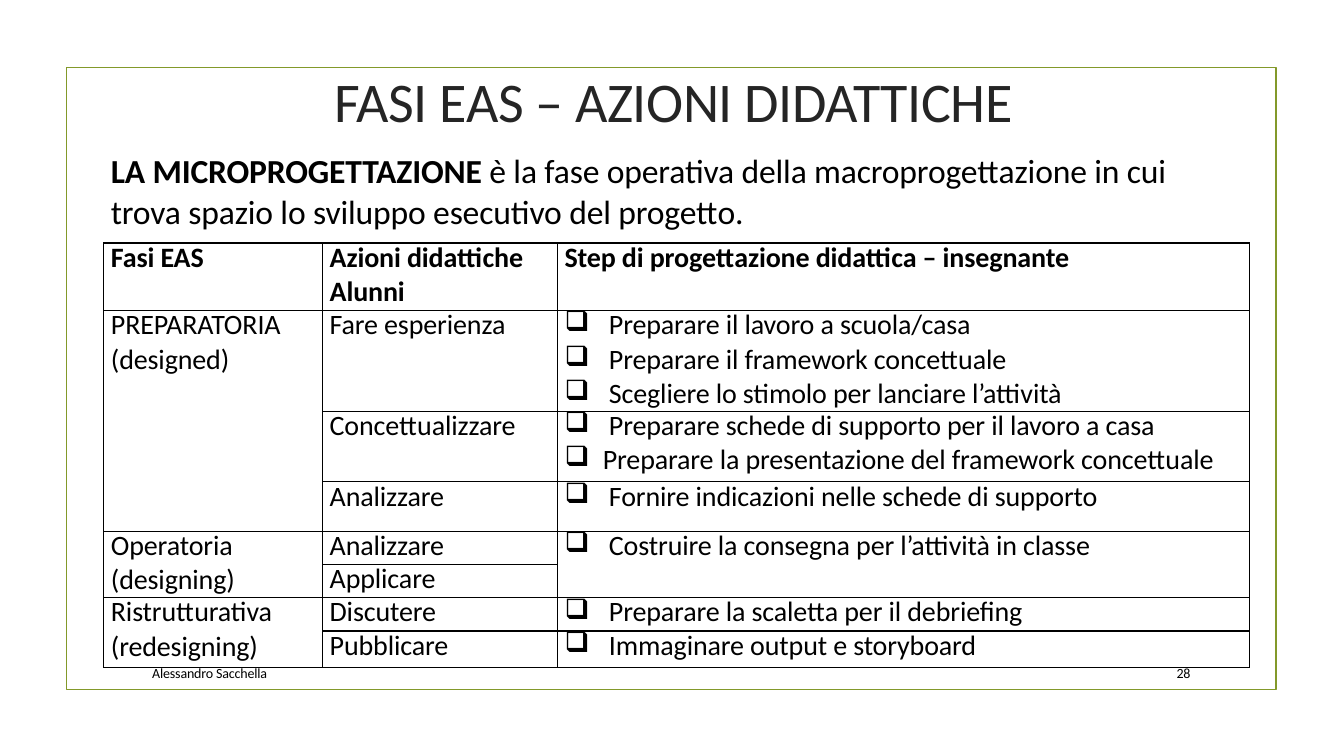
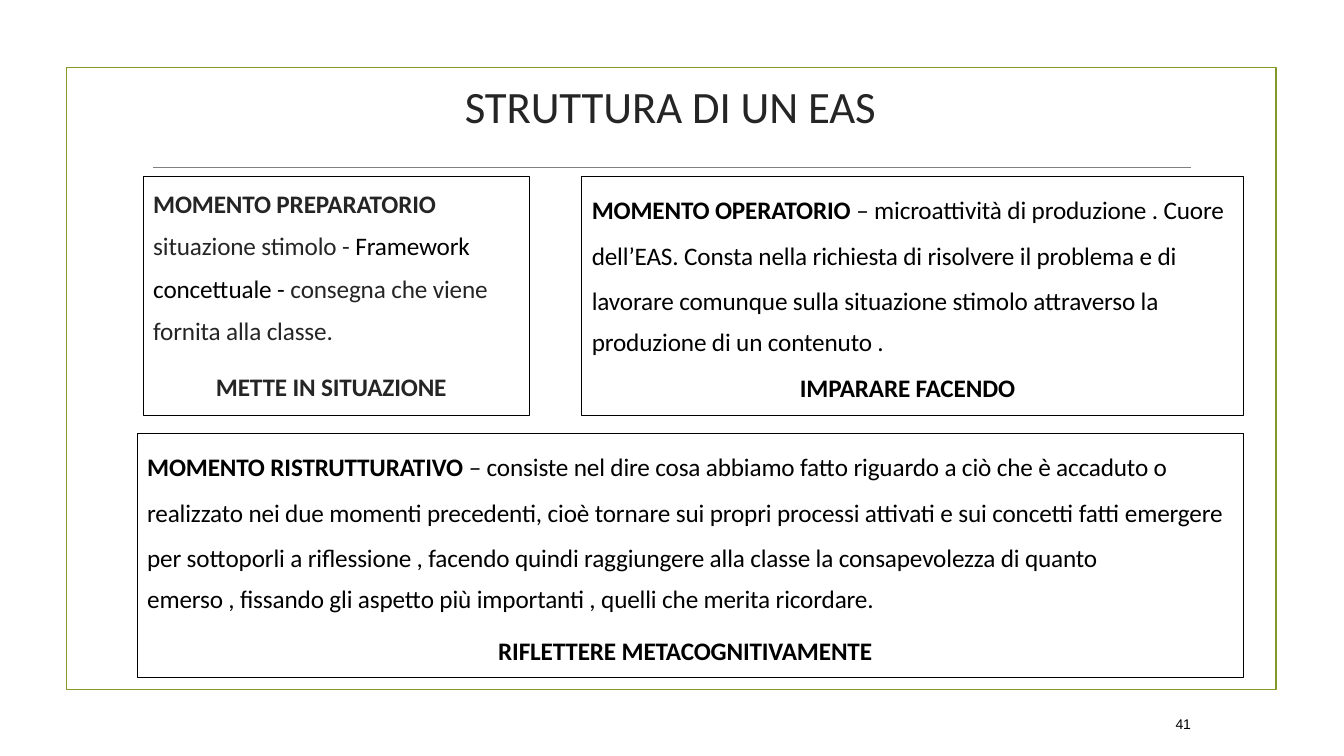
from dataclasses import dataclass
from typing import Optional

from lxml.etree import SubElement
from pptx import Presentation
from pptx.dml.color import RGBColor
from pptx.enum.shapes import MSO_CONNECTOR, MSO_SHAPE
from pptx.enum.text import MSO_ANCHOR, PP_ALIGN
from pptx.oxml import parse_xml
from pptx.oxml.ns import nsdecls, qn
from pptx.util import Inches, Pt

BLACK = RGBColor(0x00, 0x00, 0x00)
CHARCOAL = RGBColor(0x25, 0x25, 0x25)
GREY = RGBColor(0x80, 0x80, 0x80)
OLIVE = RGBColor(0x83, 0x99, 0x2A)
BODY_FONT = "Calibri"
BLANK_LAYOUT = 6


@dataclass(frozen=True)
class Span:
    text: str
    bold: bool = False
    color: RGBColor = BLACK


@dataclass(frozen=True)
class Para:
    spans: tuple[Span, ...]
    indent: float = 0
    hanging: float = 0
    line_spacing: Optional[float | Pt] = None
    before: float = 0
    centred: bool = False


@dataclass(frozen=True)
class Style:
    size: float
    font: str = BODY_FONT
    tracking: float = -0.1


@dataclass(frozen=True)
class Area:
    left: float
    top: float
    width: float
    height: float

    def lengths(self) -> tuple:
        return tuple(map(Inches, (self.left, self.top, self.width, self.height)))


@dataclass(frozen=True)
class Moment:
    area: Area
    top_inset: float
    paras: tuple[Para, ...]


@dataclass(frozen=True)
class Cell:
    row: int
    column: int
    lines: tuple[str, ...]
    rows: int = 1


TITLE_LARGE = Style(40, tracking=-0.3)
TITLE = Style(32)
INTRO = Style(24)
TABLE_TEXT = Style(20)
MOMENT_TEXT = Style(18)
FOOTER = Style(10)
FOOTER_ARIAL = Style(10, "Arial")

COLUMN_WIDTHS = (2.17, 2.33, 6.86)
ROW_HEIGHTS = (0.67, 1, 0.7, 0.49, 0.33, 0.33, 0.33, 0.36)
STEP_COLUMN = 2
TIGHT_STEP = "Preparare la presentazione del framework concettuale"

CELLS = (
    Cell(0, 0, ("Fasi EAS",)),
    Cell(0, 1, ("Azioni didattiche", "Alunni")),
    Cell(0, 2, ("Step di progettazione didattica – insegnante",)),
    Cell(1, 0, ("PREPARATORIA", "(designed)"), 3),
    Cell(1, 1, ("Fare esperienza",)),
    Cell(1, 2, (
        "Preparare il lavoro a scuola/casa",
        "Preparare il framework concettuale",
        "Scegliere lo stimolo per lanciare l’attività",
    )),
    Cell(2, 1, ("Concettualizzare",)),
    Cell(2, 2, ("Preparare schede di supporto per il lavoro a casa", TIGHT_STEP)),
    Cell(3, 1, ("Analizzare",)),
    Cell(3, 2, ("Fornire indicazioni nelle schede di supporto",)),
    Cell(4, 0, ("Operatoria", "(designing)"), 2),
    Cell(4, 1, ("Analizzare",)),
    Cell(4, 2, ("Costruire la consegna per l’attività in classe",), 2),
    Cell(5, 1, ("Applicare",)),
    Cell(6, 0, ("Ristrutturativa", "(redesigning)"), 2),
    Cell(6, 1, ("Discutere",)),
    Cell(6, 2, ("Preparare la scaletta per il debriefing",)),
    Cell(7, 1, ("Pubblicare",)),
    Cell(7, 2, ("Immaginare output e storyboard",)),
)

MOMENTS = (
    Moment(Area(1.42, 1.75, 3.83, 2.37), 0.12, (
        Para((Span("MOMENTO PREPARATORIO", True, CHARCOAL),), 0.1),
        Para((
            Span("situazione stimolo - ", color=CHARCOAL),
            Span("Framework concettuale - "),
            Span("consegna che viene fornita alla classe.", color=CHARCOAL),
        ), 0.1, line_spacing=1.4),
        Para((Span("METTE IN SITUAZIONE", True, CHARCOAL),), before=18.5, centred=True),
    )),
    Moment(Area(5.77, 1.75, 6.56, 2.37), 0.03, (
        Para((
            Span("MOMENTO OPERATORIO ", True),
            Span("– microattività di produzione . Cuore dell’EAS. Consta nella "
                 "richiesta di risolvere il problema e di lavorare comunque sulla "
                 "situazione stimolo attraverso la"),
        ), 0.1, line_spacing=Pt(32.4)),
        Para((Span("produzione di un contenuto ."),), 0.1, before=8),
        Para((Span("IMPARARE FACENDO", True),), before=10.8, centred=True),
    )),
    Moment(Area(1.36, 4.3, 10.97, 2.42), 0.03, (
        Para((
            Span("MOMENTO RISTRUTTURATIVO ", True),
            Span("– consiste nel dire cosa abbiamo fatto riguardo a ciò che è accaduto "
                 "o realizzato nei due momenti precedenti, cioè tornare sui propri "
                 "processi attivati e sui concetti fatti emergere per sottoporli a "
                 "riflessione , facendo quindi raggiungere alla classe la "
                 "consapevolezza di quanto"),
        ), 0.1, line_spacing=Pt(32.4)),
        Para((Span("emerso , fissando gli aspetto più importanti , quelli che merita "
                   "ricordare."),), 0.1, before=8),
        Para((Span("RIFLETTERE METACOGNITIVAMENTE", True),), before=15.1, centred=True),
    )),
)


def write_paras(text_frame, paras: tuple[Para, ...], style: Style) -> None:
    for index, para in enumerate(paras):
        paragraph = text_frame.paragraphs[0] if index == 0 else text_frame.add_paragraph()
        paragraph.alignment = PP_ALIGN.CENTER if para.centred else PP_ALIGN.LEFT
        paragraph.space_before = Pt(para.before)
        if para.line_spacing:
            paragraph.line_spacing = para.line_spacing
        properties = paragraph._p.get_or_add_pPr()
        properties.set("marL", str(Inches(para.indent)))
        properties.set("indent", str(Inches(-para.hanging)))
        if para.hanging:
            SubElement(properties, qn("a:buChar")).set("char", "❑")
        for span in para.spans:
            run = paragraph.add_run()
            run.text = span.text
            run.font.name = style.font
            run.font.size = Pt(style.size)
            run.font.bold = span.bold
            run.font.color.rgb = span.color
            run._r.get_or_add_rPr().set("spc", str(round(style.tracking * 100)))


def set_insets(holder, left: float, top: float, right: float) -> None:
    holder.margin_left = Inches(left)
    holder.margin_top = Inches(top)
    holder.margin_right = Inches(right)
    holder.margin_bottom = 0


def add_text(page, area: Area, spans: tuple[Span, ...], style: Style,
             wrap: bool = False) -> None:
    box = page.shapes.add_textbox(*area.lengths())
    box.text_frame.word_wrap = wrap
    set_insets(box.text_frame, 0.01, 0.01, 0)
    write_paras(box.text_frame, (Para(spans),), style)


def add_outline(page, area: Area, color: RGBColor, width: float):
    outline = page.shapes.add_shape(MSO_SHAPE.RECTANGLE, *area.lengths())
    outline.shadow.inherit = False
    outline.fill.background()
    outline.line.color.rgb = color
    outline.line.width = Pt(width)
    return outline


def add_page(deck, title: str, title_area: Area, title_style: Style,
             number: str, number_area: Area, number_style: Style):
    page = deck.slides.add_slide(deck.slide_layouts[BLANK_LAYOUT])
    add_outline(page, Area(0.66, 0.67, 12, 6.17), OLIVE, 1.25)
    add_text(page, title_area, (Span(title, color=CHARCOAL),), title_style)
    add_text(page, number_area, (Span(number),), number_style)
    return page


def add_rule(page, left: float, right: float, top: float) -> None:
    rule = page.shapes.add_connector(
        MSO_CONNECTOR.STRAIGHT, Inches(left), Inches(top), Inches(right), Inches(top))
    rule.line.color.rgb = GREY
    rule.line.width = Pt(0.75)
    SubElement(rule._element.spPr, qn("a:effectLst"))


def add_moment(page, moment: Moment) -> None:
    box = add_outline(page, moment.area, BLACK, 0.75)
    box.text_frame.word_wrap = True
    box.text_frame.vertical_anchor = MSO_ANCHOR.TOP
    set_insets(box.text_frame, 0, moment.top_inset, 0.1)
    write_paras(box.text_frame, moment.paras, MOMENT_TEXT)


def clear_cell(table_cell) -> None:
    set_insets(table_cell, 0, 0, 0)
    table_cell.fill.background()
    properties = table_cell._tc.get_or_add_tcPr()
    for position, side in enumerate(("lnL", "lnR", "lnT", "lnB")):
        properties.insert(position, parse_xml(
            f'<a:{side} {nsdecls("a")} w="{Pt(1)}"><a:solidFill>'
            f'<a:srgbClr val="{BLACK}"/></a:solidFill></a:{side}>'))


def cell_para(cell: Cell, index: int) -> Para:
    line = cell.lines[index]
    indent, hanging = 0.07, 0
    if cell.column == STEP_COLUMN and cell.row > 0:
        indent, hanging = (0.45, 0.38) if line == TIGHT_STEP else (0.51, 0.44)
    return Para((Span(line, cell.row == 0),), indent, hanging,
                Pt(22.8) if index == 0 else None)


def add_phase_table(page) -> None:
    area = Area(1.03, 2.41, sum(COLUMN_WIDTHS), sum(ROW_HEIGHTS))
    table = page.shapes.add_table(
        len(ROW_HEIGHTS), len(COLUMN_WIDTHS), *area.lengths()).table
    table.first_row = False
    table.horz_banding = False
    for column, width in zip(table.columns, COLUMN_WIDTHS):
        column.width = Inches(width)
    for row, height in zip(table.rows, ROW_HEIGHTS):
        row.height = Inches(height)
    for table_cell in table.iter_cells():
        clear_cell(table_cell)
    for cell in CELLS:
        target = table.cell(cell.row, cell.column)
        if cell.rows > 1:
            target.merge(table.cell(cell.row + cell.rows - 1, cell.column))
        paras = tuple(cell_para(cell, index) for index in range(len(cell.lines)))
        write_paras(target.text_frame, paras, TABLE_TEXT)


def build_phases(deck) -> None:
    page = add_page(deck, "FASI EAS – AZIONI DIDATTICHE", Area(3.31, 0.65, 6.87, 0.69),
                    TITLE_LARGE, "28", Area(11.66, 6.58, 0.17, 0.19), FOOTER)
    add_text(page, Area(1.5, 6.58, 1.2, 0.19), (Span("Alessandro Sacchella"),), FOOTER)
    add_phase_table(page)
    add_text(page, Area(1.09, 1.48, 10.6, 0.83), (
        Span("LA MICROPROGETTAZIONE ", True),
        Span("è la fase operativa della macroprogettazione in cui trova spazio lo "
             "sviluppo esecutivo del progetto."),
    ), INTRO, wrap=True)


def build_structure(deck) -> None:
    page = add_page(deck, "STRUTTURA DI UN EAS", Area(4.6, 0.77, 4.13, 0.56),
                    TITLE, "41", Area(11.65, 7.09, 0.18, 0.19), FOOTER_ARIAL)
    add_rule(page, 1.52, 11.81, 1.66)
    for moment in MOMENTS:
        add_moment(page, moment)


def main() -> None:
    deck = Presentation()
    deck.slide_width = Inches(13.33)
    deck.slide_height = Inches(7.5)
    build_phases(deck)
    build_structure(deck)
    deck.save("out.pptx")


if __name__ == "__main__":
    main()
